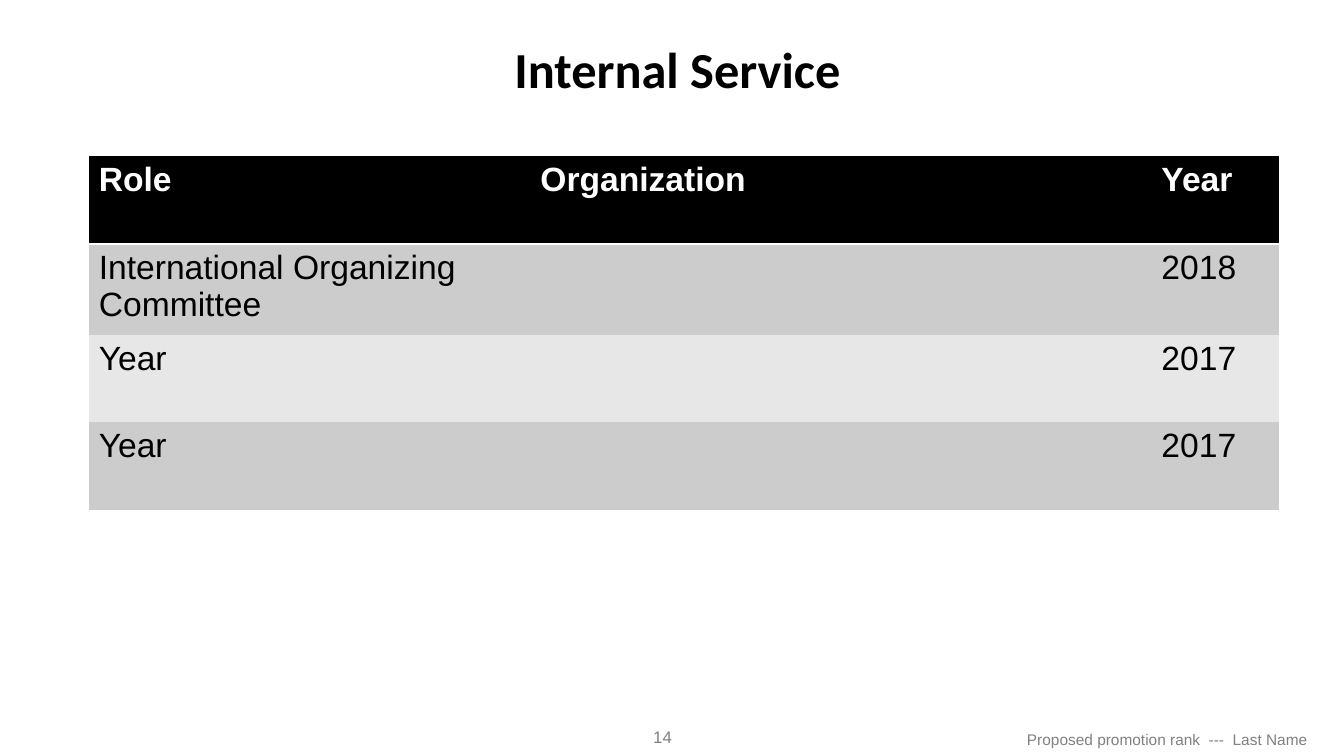
from lxml import etree
from pptx import Presentation
from pptx.dml.color import RGBColor
from pptx.enum import text
from pptx.oxml import ns
from pptx.util import Inches, Pt

# Content
TITLE = "Internal Service"
PAGE = "14"
FOOTER = "Proposed promotion rank  ---  Last Name"
SERVICE = [
    ("Role", "Organization", "Year"),
    ("International Organizing Committee", "", "2018"),
    ("Year", "", "2017"),
    ("Year", "", "2017"),
]

# Format
COLORS = {"black": "000000", "white": "FFFFFF", "gray": "808080",
          "dark_band": "CCCCCC", "light_band": "E7E7E7"}
COLUMN_WIDTHS = (4.38, 6.16, 1.27)
ROW_HEIGHT = 0.87
PLAIN_TABLE = "{2D5ABB26-0587-4C30-8999-92F81FD0307C}"


def write(frame, words, size, color="black", font="Arial", bold=False,
          align=text.PP_ALIGN.LEFT):
    frame.word_wrap = True
    paragraph = frame.paragraphs[0]
    paragraph.alignment = align
    run = paragraph.add_run()
    run.text = words
    run.font.size = Pt(size)
    run.font.name = font
    run.font.bold = bold
    run.font.color.rgb = RGBColor.from_string(COLORS[color])


def underline_cell(cell, color, points):
    border = etree.Element(ns.qn("a:lnB"), w=str(Pt(points)))
    fill = etree.SubElement(border, ns.qn("a:solidFill"))
    etree.SubElement(fill, ns.qn("a:srgbClr"), val=COLORS[color])
    cell._tc.get_or_add_tcPr().insert(0, border)


def add_title(slide):
    heading = slide.shapes.title
    heading.left, heading.top = Inches(0.75), Inches(0.3)
    heading.width, heading.height = Inches(11.94), Inches(0.53)
    frame = heading.text_frame
    frame.auto_size = text.MSO_AUTO_SIZE.NONE
    frame.vertical_anchor = text.MSO_ANCHOR.TOP
    frame.margin_top = Inches(0.08)
    write(frame, TITLE, 36, font="Calibri", bold=True,
          align=text.PP_ALIGN.CENTER)


def add_service_table(slide):
    service = slide.shapes.add_table(
        len(SERVICE), len(COLUMN_WIDTHS), Inches(0.88), Inches(1.55),
        Inches(sum(COLUMN_WIDTHS)), Inches(ROW_HEIGHT * len(SERVICE))).table
    service._tbl.tblPr.find(ns.qn("a:tableStyleId")).text = PLAIN_TABLE
    for column, width in zip(service.columns, COLUMN_WIDTHS):
        column.width = Inches(width)
    for r, entries in enumerate(SERVICE):
        service.rows[r].height = Inches(ROW_HEIGHT)
        header = r == 0
        band = "black" if header else "dark_band" if r % 2 else "light_band"
        for c, entry in enumerate(entries):
            cell = service.cell(r, c)
            cell.fill.solid()
            cell.fill.fore_color.rgb = RGBColor.from_string(COLORS[band])
            if header:
                underline_cell(cell, "white", 2)
            if entry:
                write(cell.text_frame, entry, 24, bold=header,
                      color="white" if header else "black")


def add_footer(slide):
    page = slide.shapes.add_textbox(
        Inches(6.38), Inches(7.16), Inches(0.61), Inches(0.3))
    write(page.text_frame, PAGE, 12, color="gray")
    footer = slide.shapes.add_textbox(
        Inches(8.85), Inches(7.19), Inches(4.22), Inches(0.24))
    write(footer.text_frame, FOOTER, 11, color="gray",
          align=text.PP_ALIGN.RIGHT)


def main():
    deck = Presentation()
    deck.slide_width, deck.slide_height = Inches(13.33), Inches(7.5)
    slide = deck.slides.add_slide(deck.slide_layouts[5])
    add_footer(slide)
    add_title(slide)
    add_service_table(slide)
    deck.save("out.pptx")


if __name__ == "__main__":
    main()
